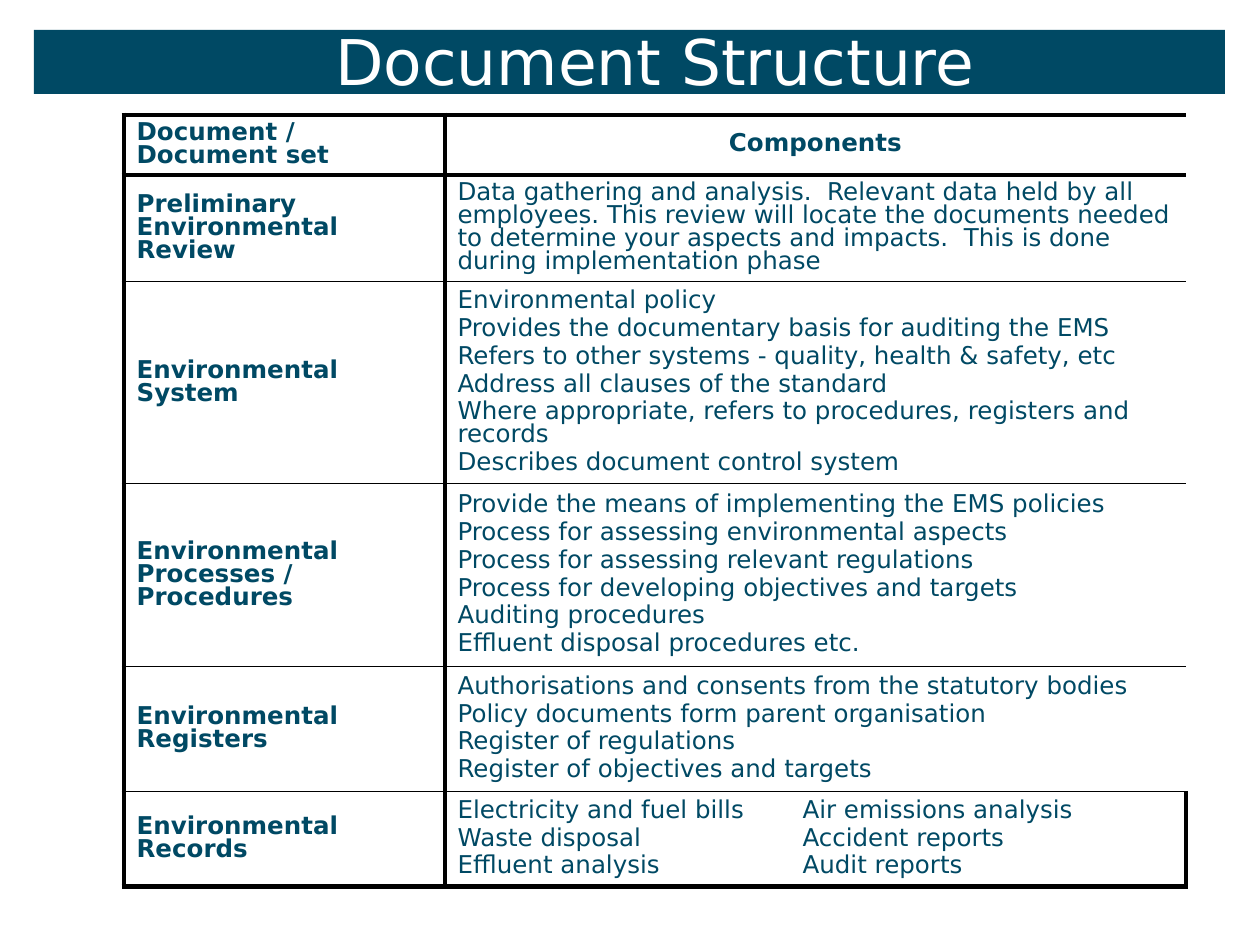
"""Build the Document Structure slide."""
from lxml.etree import SubElement
from pptx import Presentation
from pptx.dml.color import RGBColor
from pptx.enum.shapes import MSO_SHAPE
from pptx.enum.text import MSO_ANCHOR, MSO_AUTO_SIZE, PP_ALIGN
from pptx.oxml.ns import qn
from pptx.util import Emu, Pt

FONT = "DejaVu Sans"
TEAL, WHITE, BLACK = "004964", "FFFFFF", "000000"
COLUMN_WIDTHS = [321, 345, 396]
ROW_HEIGHTS = [60, 106, 202, 183, 125, 95]
ROW_RULES = [3, 3, 1, 1, 1, 1, 3]
COLUMN_RULES = [3, 3, 0, 3]
ROWS = [
    ("Document / Document set", ["Components"]),
    ("Preliminary Environmental Review", [
        "Data gathering and analysis.  Relevant data held by all employees. "
        "This review will locate the documents needed to determine your "
        "aspects and impacts.  This is done during implementation phase"]),
    ("Environmental System", [
        "Environmental policy",
        "Provides the documentary basis for auditing the EMS",
        "Refers to other systems - quality, health & safety, etc",
        "Address all clauses of the standard",
        "Where appropriate, refers to procedures, registers and records",
        "Describes document control system"]),
    ("Environmental Processes / Procedures", [
        "Provide the means of implementing the EMS policies",
        "Process for assessing environmental aspects",
        "Process for assessing relevant regulations",
        "Process for developing objectives and targets",
        "Auditing procedures",
        "Effluent disposal procedures etc."]),
    ("Environmental Registers", [
        "Authorisations and consents from the statutory bodies",
        "Policy documents form parent organisation",
        "Register of regulations",
        "Register of objectives and targets"]),
    ("Environmental Records",
     ["Electricity and fuel bills", "Waste disposal", "Effluent analysis"],
     ["Air emissions analysis", "Accident reports", "Audit reports"]),
]


def px(length):
    """Turn whole pixels into EMU at 126 px to the inch."""
    return Emu(round(length * 914400 / 126))


def rgb(hex_colour):
    """Turn a hex string into a colour."""
    return RGBColor.from_string(hex_colour)


def write_text(frame, lines, size=14, colour=TEAL, bold=False,
               align=PP_ALIGN.LEFT, spacing=0.8, gap=2.8):
    """Write one paragraph per line with a shared format."""
    for index, line in enumerate(lines):
        paragraph = frame.add_paragraph() if index else frame.paragraphs[0]
        paragraph.alignment = align
        paragraph.line_spacing = spacing
        paragraph.space_before = Pt(gap if index else 0)
        run = paragraph.add_run()
        run.text = line
        run.font.name = FONT
        run.font.size = Pt(size)
        run.font.bold = bold
        run.font.color.rgb = rgb(colour)


def set_borders(cell, widths):
    """Draw left, right, top and bottom borders in points; zero hides one."""
    properties = cell._tc.get_or_add_tcPr()
    for side, width in zip(("lnL", "lnR", "lnT", "lnB"), widths):
        line = SubElement(properties, qn(f"a:{side}"), w=str(Pt(width)))
        if width:
            fill = SubElement(line, qn("a:solidFill"))
            SubElement(fill, qn("a:srgbClr"), val=BLACK)
        else:
            SubElement(line, qn("a:noFill"))


def add_title(slide, text):
    """Place the title over its coloured band."""
    band = slide.shapes.add_shape(
        MSO_SHAPE.RECTANGLE, px(34), px(30), px(1191), px(64))
    band.shadow.inherit = False
    band.fill.solid()
    band.fill.fore_color.rgb = rgb(TEAL)
    band.line.fill.background()
    title = slide.shapes.title
    title._element.addprevious(band._element)
    title.left, title.top, title.width, title.height = map(
        px, (124, 26, 1062, 77))
    frame = title.text_frame
    frame.word_wrap = True
    frame.auto_size = MSO_AUTO_SIZE.SHAPE_TO_FIT_TEXT
    frame.vertical_anchor = MSO_ANCHOR.BOTTOM
    write_text(frame, [text], size=36, colour=WHITE,
               align=PP_ALIGN.CENTER, spacing=0.75)


def add_document_table(slide):
    """Add the ruled table of document sets and their components."""
    table = slide.shapes.add_table(
        len(ROW_HEIGHTS), len(COLUMN_WIDTHS), px(124), px(115),
        px(sum(COLUMN_WIDTHS)), px(sum(ROW_HEIGHTS))).table
    table.first_row = table.horz_banding = False
    for column, width in zip(table.columns, COLUMN_WIDTHS):
        column.width = px(width)
    for r, (document, *components) in enumerate(ROWS):
        table.rows[r].height = px(ROW_HEIGHTS[r])
        for c, cell in enumerate(table.rows[r].cells):
            set_borders(cell, COLUMN_RULES[c:c + 2] + ROW_RULES[r:r + 2])
            cell.fill.background()
            cell.vertical_anchor = MSO_ANCHOR.MIDDLE
        if len(components) == 1:
            table.cell(r, 1).merge(table.cell(r, 2))
        header = r == 0
        write_text(table.cell(r, 0).text_frame, [document], bold=True)
        for c, lines in enumerate(components, 1):
            write_text(table.cell(r, c).text_frame, lines, bold=header,
                       align=PP_ALIGN.CENTER if header else PP_ALIGN.LEFT)


def main():
    """Build and save the slide."""
    presentation = Presentation()
    presentation.slide_width = px(1260)
    presentation.slide_height = px(945)
    slide = presentation.slides.add_slide(presentation.slide_layouts[5])
    add_title(slide, "Document Structure")
    add_document_table(slide)
    presentation.save("out.pptx")


if __name__ == "__main__":
    main()
